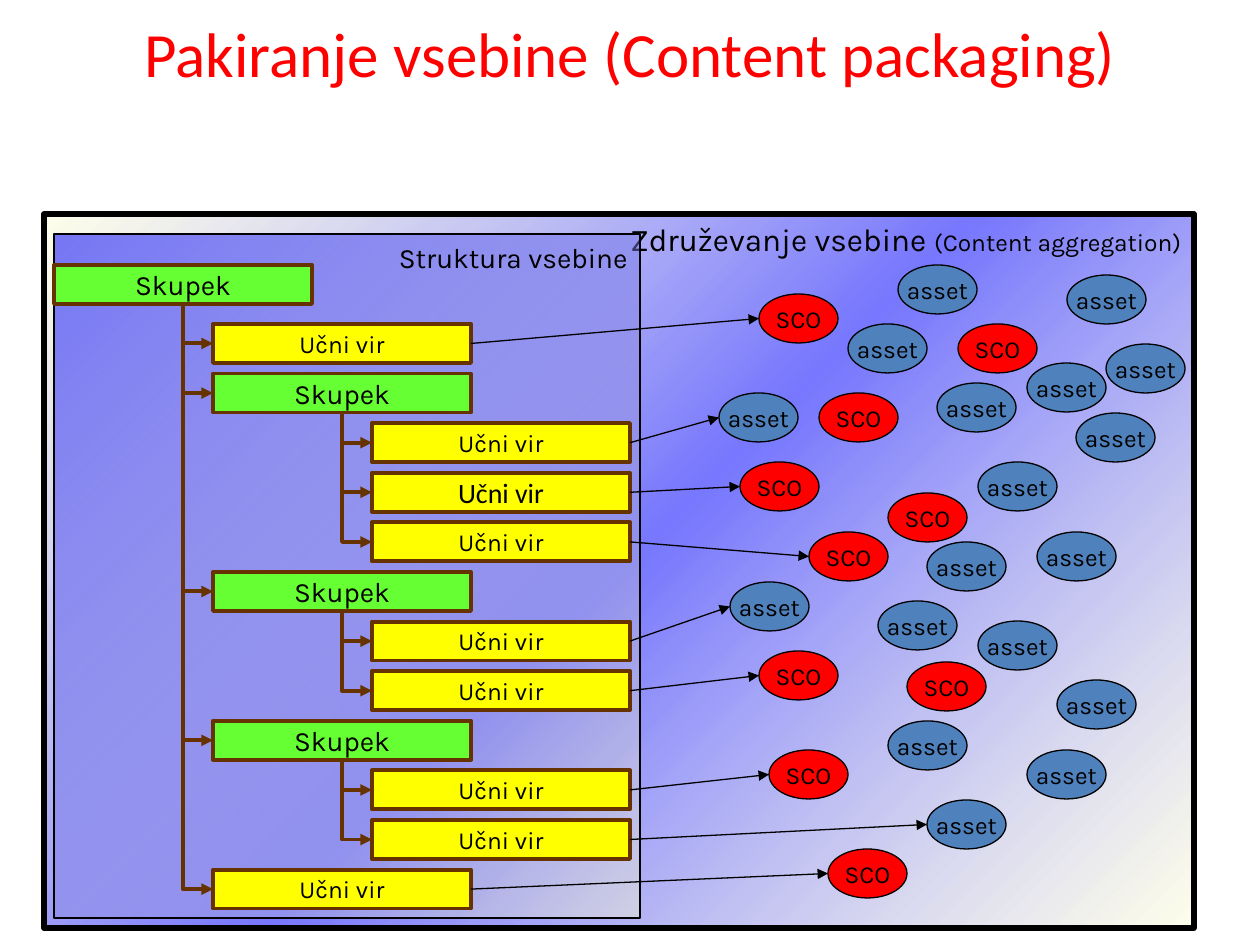
from lxml import etree
from pptx import Presentation
from pptx.dml.color import RGBColor
from pptx.enum.shapes import MSO_CONNECTOR, MSO_SHAPE
from pptx.enum.text import MSO_ANCHOR, PP_ALIGN
from pptx.oxml.ns import qn
from pptx.util import Pt

RECTANGLE, OVAL = MSO_SHAPE.RECTANGLE, MSO_SHAPE.OVAL
STRAIGHT, ELBOW = MSO_CONNECTOR.STRAIGHT, MSO_CONNECTOR.ELBOW
TOP, MIDDLE = MSO_ANCHOR.TOP, MSO_ANCHOR.MIDDLE
CENTER, RIGHT = PP_ALIGN.CENTER, PP_ALIGN.RIGHT

SCALE = 914400 / 126
BLACK, BROWN, RED, BLUE = "000000", "663300", "FF0000", "4F81BD"
GREEN, YELLOW = "66FF33", "FFFF00"
CREAM_STOP, BLUE_STOP = ("FFFFCC", 39), ("0000FF", 53)

BOX_WIDTH, BOX_HEIGHT = 258, 39
LEVEL_STEP, ROW_STEP = 159, 49.6
OVAL_WIDTH, OVAL_HEIGHT = 79, 49

TREE = [
    (1, "Učni vir"),
    (1, "Skupek"),
    (2, "Učni vir"),
    (2, "Učni vir"),
    (2, "Učni vir"),
    (1, "Skupek"),
    (2, "Učni vir"),
    (2, "Učni vir"),
    (1, "Skupek"),
    (2, "Učni vir"),
    (2, "Učni vir"),
    (1, "Učni vir"),
]
CALIBRI_ROW = 3

LINKED_ITEMS = [
    ("SCO", 715, 80), ("asset", 675, 179), ("SCO", 696, 248),
    ("SCO", 765, 318), ("asset", 686, 368), ("SCO", 715, 437),
    ("SCO", 725, 536), ("asset", 883, 586), ("SCO", 784, 635),
]
FREE_ITEMS = {
    "asset": [
        (854, 51), (804, 110), (1062, 130), (893, 169), (1023, 61),
        (1032, 199), (934, 248), (983, 149), (883, 328), (834, 387),
        (1013, 466), (844, 507), (934, 407), (983, 536), (993, 318),
    ],
    "SCO": [(775, 179), (914, 110), (844, 279), (863, 448)],
}


def px(value):
    return round(value * SCALE)


def color(value):
    return RGBColor.from_string(value)


def format_run(run, size, font_name="Karla", font_color=BLACK):
    run.font.size = Pt(size)
    run.font.name = font_name
    run.font.color.rgb = color(font_color)


def add_block(slide, kind, box, line_color, line_width, anchor, alignment, texts):
    shape = slide.shapes.add_shape(kind, *map(px, box))
    shape.shadow.inherit = False
    shape.line.color.rgb = color(line_color)
    shape.line.width = Pt(line_width)
    text_frame = shape.text_frame
    text_frame.word_wrap = False
    text_frame.vertical_anchor = anchor
    paragraph = text_frame.paragraphs[0]
    paragraph.alignment = alignment
    for text, size, font_name in texts:
        run = paragraph.add_run()
        run.text = text
        format_run(run, size, font_name)
    return shape


def set_gradient(shape, stops):
    shape.fill.gradient()
    shape.fill.gradient_angle = 315
    stop_list = shape._element.spPr.find(qn("a:gradFill")).find(qn("a:gsLst"))
    for stop in list(stop_list):
        stop_list.remove(stop)
    for index, (value, opacity) in enumerate(stops):
        position = index * 100000 // (len(stops) - 1)
        stop = etree.SubElement(stop_list, qn("a:gs"), pos=str(position))
        stop_color = etree.SubElement(stop, qn("a:srgbClr"), val=value)
        etree.SubElement(stop_color, qn("a:alpha"), val=str(opacity * 1000))


def add_arrow(slide, kind, start, end, line_color, line_width):
    connector = slide.shapes.add_connector(kind, *map(px, start + end))
    connector.line.color.rgb = color(line_color)
    connector.line.width = Pt(line_width)
    properties = connector._element.spPr
    etree.SubElement(properties.find(qn("a:ln")), qn("a:tailEnd"), type="triangle")
    etree.SubElement(properties, qn("a:effectLst"))
    return connector


def add_branch(slide, start, end):
    connector = add_arrow(slide, ELBOW, start, end, BROWN, 2.25)
    across, down = end[0] - start[0], end[1] - start[1]
    connector.left = px((start[0] + end[0] - down) / 2)
    connector.top = px((start[1] + end[1] - across) / 2)
    connector.width, connector.height = px(down), px(across)
    connector.rotation = 270
    properties = connector._element.spPr
    properties.find(qn("a:xfrm")).set("flipH", "1")
    properties.find(qn("a:prstGeom")).set("prst", "bentConnector2")


def add_title(slide, box):
    title = slide.shapes.title
    title.left, title.top, title.width, title.height = map(px, box)
    text_frame = title.text_frame
    text_frame.text = "Pakiranje vsebine (Content packaging)"
    text_frame.vertical_anchor = MIDDLE
    paragraph = text_frame.paragraphs[0]
    paragraph.alignment = CENTER
    format_run(paragraph.runs[0], 36, "Calibri", RED)


def add_panel(slide, box, line_width, stops, texts):
    panel = add_block(slide, RECTANGLE, box, BLACK, line_width, TOP, RIGHT, texts)
    set_gradient(panel, stops)


def add_items(slide, box):
    items = LINKED_ITEMS + [
        (name, x, y) for name, places in FREE_ITEMS.items() for x, y in places
    ]
    for name, x, y in items:
        place = (box[0] + x, box[1] + y, OVAL_WIDTH, OVAL_HEIGHT)
        item = add_block(slide, OVAL, place, BLACK, 0.75, MIDDLE, CENTER,
                         [(name, 14, "Karla")])
        item.fill.solid()
        item.fill.fore_color.rgb = color(RED if name == "SCO" else BLUE)
    return [(box[0] + x, box[1] + y + OVAL_HEIGHT / 2) for _, x, y in LINKED_ITEMS]


def add_tree_box(slide, x, y, name, size, font_name):
    place = (x, y, BOX_WIDTH, BOX_HEIGHT)
    shape = add_block(slide, RECTANGLE, place, BROWN, 2.25, MIDDLE, CENTER,
                      [(name, size, font_name)])
    shape.fill.solid()
    shape.fill.fore_color.rgb = color(GREEN if name == "Skupek" else YELLOW)
    return shape


def add_tree(slide, box, targets):
    left, top = box[:2]
    root_top = top + 31
    add_tree_box(slide, left, root_top, "Skupek", 16, "Karla")
    parents = {0: (left + BOX_WIDTH / 2, root_top + BOX_HEIGHT)}
    branches, resources = [], []
    for row, (level, name) in enumerate(TREE):
        x = left + level * LEVEL_STEP
        y = top + 90 + row * ROW_STEP
        font_name = "Calibri" if row == CALIBRI_ROW else "Karla"
        size = 16 if name == "Skupek" or row == CALIBRI_ROW else 14
        shape = add_tree_box(slide, x, y, name, size, font_name)
        middle = y + BOX_HEIGHT / 2
        branches.append((parents[level - 1], (x, middle)))
        if name == "Skupek":
            parents[level] = (x + BOX_WIDTH / 2, y + BOX_HEIGHT)
        else:
            resources.append((shape, (x + BOX_WIDTH, middle)))
    for start, end in branches:
        add_branch(slide, start, end)
    for (shape, start), target in zip(resources, targets):
        arrow = add_arrow(slide, STRAIGHT, start, target, BLACK, 0.75)
        arrow.begin_connect(shape, 3)


def main():
    presentation = Presentation()
    presentation.slide_width, presentation.slide_height = px(1260), px(945)
    slide = presentation.slides.add_slide(presentation.slide_layouts[5])
    aggregation, structure = (44, 214, 1150, 714), (54, 234, 586, 684)
    add_title(slide, (63, 0, 1134, 105))
    add_panel(slide, aggregation, 3, [CREAM_STOP, BLUE_STOP, CREAM_STOP],
              [("Združevanje vsebine ", 18, "Karla"),
               ("(Content aggregation)", 14, "Karla")])
    add_panel(slide, structure, 0.75, [BLUE_STOP, CREAM_STOP],
              [("Struktura vsebine", 16, "Karla")])
    targets = add_items(slide, aggregation)
    add_tree(slide, structure, targets)
    presentation.save("out.pptx")


if __name__ == "__main__":
    main()
